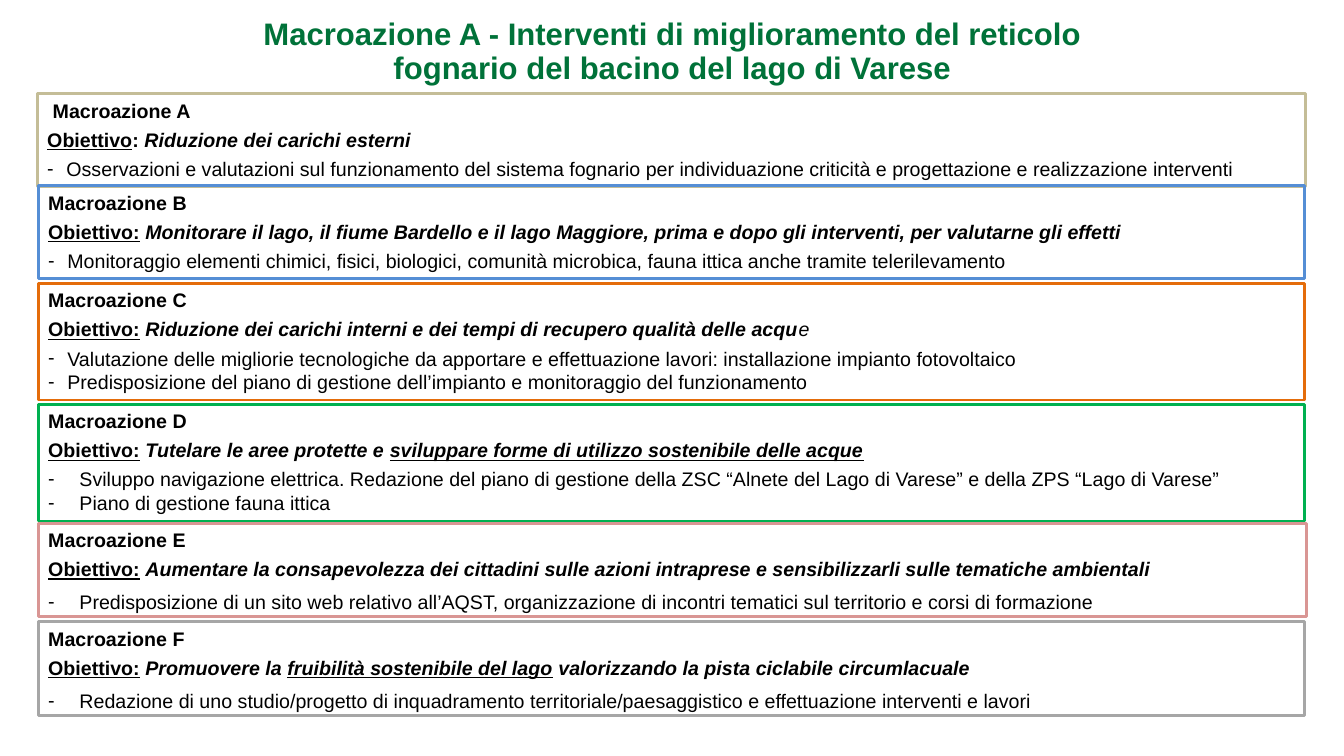
from pptx import Presentation
from pptx.dml.color import RGBColor
from pptx.enum.shapes import MSO_SHAPE
from pptx.enum.text import MSO_ANCHOR, MSO_AUTO_SIZE, PP_ALIGN
from pptx.oxml.ns import qn
from pptx.util import Pt
from lxml import etree

LEFT, CENTER, JUSTIFY = PP_ALIGN.LEFT, PP_ALIGN.CENTER, PP_ALIGN.JUSTIFY
TOP, MIDDLE = MSO_ANCHOR.TOP, MSO_ANCHOR.MIDDLE
RECT = MSO_SHAPE.RECTANGLE
GROW = MSO_AUTO_SIZE.SHAPE_TO_FIT_TEXT

PX = 9144  # 100 px to the inch
FONT = "Arial"
COLORS = {
    "title": "007239", "text": "000000",
    "A": "C4BD97", "B": "558ED5", "C": "E46C0A",
    "D": "00B050", "E": "D99694", "F": "A6A6A6",
}
TITLE = ("Macroazione A - Interventi di miglioramento del reticolo "
         "fognario del bacino del lago di Varese")
TITLE_BOX = (242, 11, 850, 82)
NARROW = dict(indent=19, align=LEFT)
WIDE = dict(indent=31, align=JUSTIFY)
WIDE_TALL = dict(WIDE, line=1.15)

# Runs are (text, style); style letters: b bold, i italic, u underline
LABEL = [("Obiettivo:", "bu"), (" ", "b")]
ACTIONS = [
    dict(key="A", box=(37, 93, 1258, 92), heading=" Macroazione A", align=LEFT,
         goal=[("Obiettivo", "bu"), (": ", "b"), ("Riduzione dei carichi esterni", "bi")],
         items=["Osservazioni e valutazioni sul funzionamento del sistema fognario per "
                "individuazione criticità e progettazione e realizzazione interventi"],
         bullets=NARROW),
    dict(key="B", box=(38, 184, 1256, 92), heading="Macroazione B", align=JUSTIFY,
         goal=LABEL + [("Monitorare il lago, il fiume Bardello e il lago Maggiore, prima e dopo "
                        "gli interventi, per valutarne gli effetti", "bi")],
         items=["Monitoraggio elementi chimici, fisici, biologici, comunità microbica, "
                "fauna ittica anche tramite telerilevamento"],
         bullets=NARROW),
    dict(key="C", box=(38, 281, 1256, 116), heading="Macroazione C", align=JUSTIFY,
         goal=LABEL + [("Riduzione dei carichi interni e dei tempi di recupero qualità "
                        "delle acqu", "bi"), ("e", "i")],
         items=["Valutazione delle migliorie tecnologiche da apportare e effettuazione "
                "lavori: installazione impianto fotovoltaico",
                "Predisposizione del piano di gestione dell’impianto e monitoraggio "
                "del funzionamento"],
         bullets=NARROW),
    dict(key="D", box=(38, 401, 1256, 116), heading="Macroazione D", align=JUSTIFY,
         goal=LABEL + [("Tutelare le aree protette e ", "bi"),
                       ("sviluppare forme di utilizzo sostenibile delle acque", "biu")],
         items=["Sviluppo navigazione elettrica. Redazione del piano di gestione della ZSC "
                "“Alnete del Lago di Varese” e della ZPS “Lago di Varese”",
                "Piano di gestione fauna ittica"],
         bullets=WIDE),
    dict(key="E", box=(38, 519, 1258, 93), heading="Macroazione E", align=JUSTIFY,
         goal=LABEL + [("Aumentare la consapevolezza dei cittadini sulle azioni intraprese e "
                        "sensibilizzarli sulle tematiche ambientali", "bi")],
         items=["Predisposizione di un sito web relativo all’AQST, organizzazione di "
                "incontri tematici sul territorio e corsi di formazione"],
         bullets=WIDE_TALL),
    dict(key="F", box=(38, 617, 1256, 93), heading="Macroazione F", align=JUSTIFY,
         goal=LABEL + [("Promuovere la ", "bi"), ("fruibilità sostenibile del lago", "biu"),
                       (" valorizzando la pista ciclabile circumlacuale", "bi")],
         items=["Redazione di uno studio/progetto di inquadramento "
                "territoriale/paesaggistico e effettuazione interventi e lavori"],
         bullets=WIDE_TALL),
]


def write(p, runs, size=14, color="text", align=LEFT, after=0, line=1.0, indent=0):
    """Fill a paragraph with runs; a positive indent makes it a dash bullet."""
    if indent:
        pPr = p._p.get_or_add_pPr()
        pPr.set("marL", str(indent * PX))
        pPr.set("indent", str(-indent * PX))
        etree.SubElement(pPr, qn("a:buFont")).set("typeface", FONT)
        etree.SubElement(pPr, qn("a:buChar")).set("char", "-")
    p.alignment, p.line_spacing = align, line
    p.space_before, p.space_after = Pt(0), Pt(after)
    for text, style in runs:
        r = p.add_run()
        r.text = text
        r.font.name, r.font.size = FONT, Pt(size)
        r.font.color.rgb = RGBColor.from_string(COLORS[color])
        r.font.bold, r.font.italic, r.font.underline = (c in style for c in "biu")


def add_action(s, action):
    sp = s.shapes.add_shape(RECT, *(v * PX for v in action["box"]))
    sp.shadow.inherit = False
    sp.fill.background()
    sp.line.color.rgb = RGBColor.from_string(COLORS[action["key"]])
    sp.line.width = Pt(2)
    tf = sp.text_frame
    tf.word_wrap, tf.vertical_anchor, tf.auto_size = True, TOP, GROW
    align = action["align"]
    write(tf.paragraphs[0], [(action["heading"], "b")], align=align, after=4)
    write(tf.add_paragraph(), action["goal"], align=align, after=4)
    for item in action["items"]:
        write(tf.add_paragraph(), [(item, "")], **action["bullets"])


def main():
    prs = Presentation()
    prs.slide_width, prs.slide_height = 1333 * PX, 750 * PX
    s = prs.slides.add_slide(prs.slide_layouts[5])
    title = s.shapes.title
    title.left, title.top, title.width, title.height = (v * PX for v in TITLE_BOX)
    tf = title.text_frame
    tf.word_wrap, tf.vertical_anchor, tf.auto_size = True, MIDDLE, MSO_AUTO_SIZE.NONE
    write(tf.paragraphs[0], [(TITLE, "b")], size=22.2, color="title", align=CENTER, line=0.9)
    for action in ACTIONS:
        add_action(s, action)
    prs.save("out.pptx")


if __name__ == "__main__":
    main()
